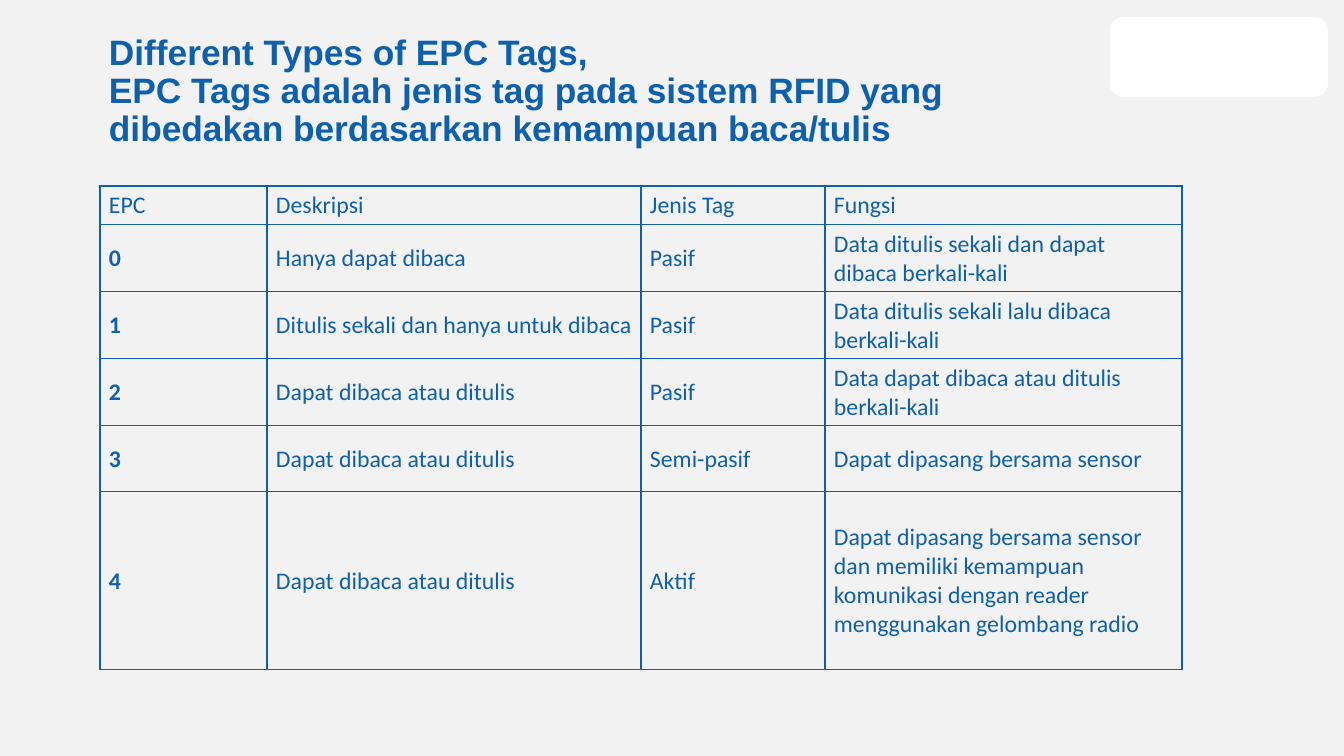
import dataclasses

import lxml.etree
import pptx
import pptx.dml.color
import pptx.enum.shapes
import pptx.enum.text
import pptx.oxml.ns
import pptx.util

PX = 914400 / 100.8
SLIDE_W, SLIDE_H = 1344, 756

TITLE = ("Different Types of EPC Tags,\n"
         "EPC Tags adalah jenis tag pada sistem RFID yang "
         "dibedakan berdasarkan kemampuan baca/tulis")
TAG_ROWS = [
    ("EPC", "Deskripsi", "Jenis Tag", "Fungsi"),
    ("0", "Hanya dapat dibaca", "Pasif",
     "Data ditulis sekali dan dapat dibaca berkali-kali"),
    ("1", "Ditulis sekali dan hanya untuk dibaca", "Pasif",
     "Data ditulis sekali lalu dibaca berkali-kali"),
    ("2", "Dapat dibaca atau ditulis", "Pasif",
     "Data dapat dibaca atau ditulis berkali-kali"),
    ("3", "Dapat dibaca atau ditulis", "Semi-pasif",
     "Dapat dipasang bersama sensor"),
    ("4", "Dapat dibaca atau ditulis", "Aktif",
     "Dapat dipasang bersama sensor dan memiliki kemampuan "
     "komunikasi dengan reader menggunakan gelombang radio"),
]
COL_WIDTHS = [167, 374, 184, 357]
ROW_HEIGHTS = [38, 66, 66, 66, 66, 178]


@dataclasses.dataclass(frozen=True)
class Theme:
    ink: str = "0E60AC"
    backdrop: str = "F2F2F2"
    panel: str = "FFFFFF"
    title_font: str = "Arial"
    table_font: str = "Calibri"
    title_size: float = 25.2
    table_size: float = 17
    border: float = 1


THEME = Theme()


def px(n):
    return pptx.util.Emu(round(n * PX))


def rgb(value):
    return pptx.dml.color.RGBColor.from_string(value)


def set_text(p, text, font, size, bold):
    p.text = text
    for r in p.runs:
        r.font.name = font
        r.font.size = pptx.util.Pt(size)
        r.font.bold = bold
        r.font.color.rgb = rgb(THEME.ink)


def set_insets(box):
    """Give a text frame or a table cell the common inner margins."""
    box.margin_left = box.margin_right = px(9)
    box.margin_top = box.margin_bottom = px(5)


def set_borders(cell):
    tc_pr = cell._tc.get_or_add_tcPr()
    for i, side in enumerate(("lnL", "lnR", "lnT", "lnB")):
        ln = lxml.etree.Element(pptx.oxml.ns.qn(f"a:{side}"),
                                w=str(pptx.util.Pt(THEME.border)))
        fill = lxml.etree.SubElement(ln, pptx.oxml.ns.qn("a:solidFill"))
        lxml.etree.SubElement(fill, pptx.oxml.ns.qn("a:srgbClr"), val=THEME.ink)
        tc_pr.insert(i, ln)


def add_panel(slide, x, y, w, h):
    """Add the plain rounded panel in the corner."""
    sp = slide.shapes.add_shape(pptx.enum.shapes.MSO_SHAPE.ROUNDED_RECTANGLE,
                                px(x), px(y), px(w), px(h))
    sp.shadow.inherit = False
    sp.fill.solid()
    sp.fill.fore_color.rgb = rgb(THEME.panel)
    sp.line.fill.background()


def add_title(slide, x, y, w, h):
    tf = slide.shapes.add_textbox(px(x), px(y), px(w), px(h)).text_frame
    tf.word_wrap = True
    tf.vertical_anchor = pptx.enum.text.MSO_ANCHOR.TOP
    set_insets(tf)
    p = tf.paragraphs[0]
    p.line_spacing = 0.9
    set_text(p, TITLE, THEME.title_font, THEME.title_size, True)


def add_tag_table(slide, x, y):
    table = slide.shapes.add_table(
        len(TAG_ROWS), len(COL_WIDTHS), px(x), px(y),
        px(sum(COL_WIDTHS)), px(sum(ROW_HEIGHTS))).table
    table.first_row = table.horz_banding = False
    for col, width in zip(table.columns, COL_WIDTHS):
        col.width = px(width)
    for row, height in zip(table.rows, ROW_HEIGHTS):
        row.height = px(height)
    for i, texts in enumerate(TAG_ROWS):
        for j, text in enumerate(texts):
            cell = table.cell(i, j)
            cell.fill.background()
            cell.vertical_anchor = pptx.enum.text.MSO_ANCHOR.MIDDLE
            set_insets(cell)
            set_borders(cell)
            set_text(cell.text_frame.paragraphs[0], text, THEME.table_font,
                     THEME.table_size, i > 0 and j == 0)


def add_tags_slide(prs):
    slide = prs.slides.add_slide(prs.slide_layouts[6])
    slide.background.fill.solid()
    slide.background.fill.fore_color.rgb = rgb(THEME.backdrop)
    add_panel(slide, 1110, 17, 218, 80)
    add_title(slide, 100, 30, 1026, 72)
    add_tag_table(slide, 100, 186)


def main():
    prs = pptx.Presentation()
    prs.slide_width, prs.slide_height = px(SLIDE_W), px(SLIDE_H)
    add_tags_slide(prs)
    prs.save("out.pptx")


if __name__ == "__main__":
    main()
